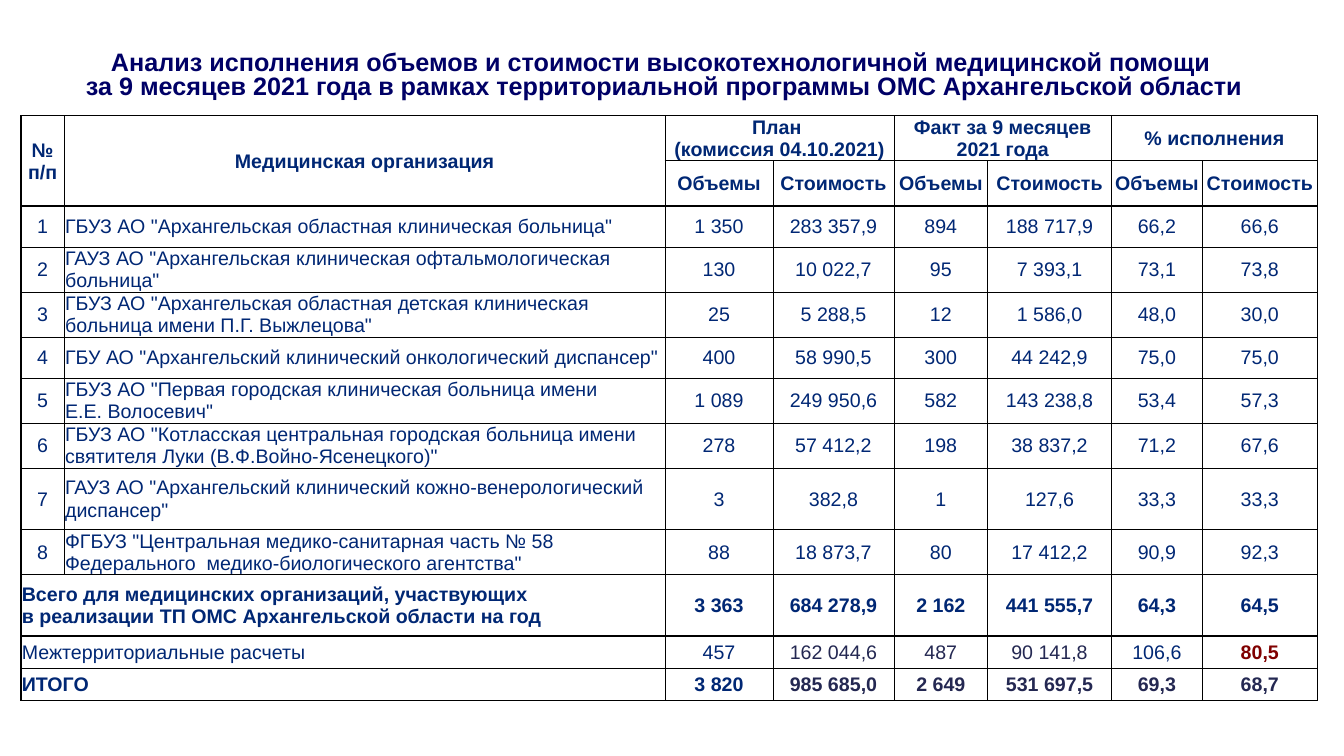
from lxml.etree import SubElement as Sub
from pptx import Presentation
from pptx.dml.color import RGBColor as Rgb
from pptx.enum.text import MSO_ANCHOR as Anchor, PP_ALIGN as Align
from pptx.oxml.ns import qn
from pptx.util import Cm, Pt

FONT = "Arial"
HUE = {"title": "000066", "text": "002774", "dark": "242852",
       "alert": "800000", "line": "000000"}

# Table grid, in centimetres
COLS = [1.09, 15.14, 2.72, 3.05, 2.36, 3.12, 2.29, 2.9]
ROWS = [1.12, 1.14, 1.04, 1.13, 1.13, 1.04, 1.13, 1.13, 1.55, 1.13,
        1.55, 0.83, 0.79]
HEAVY = {0, 2, 11, 12, 13}  # horizontal rules drawn at 1 pt
SUM, INTER, TOTAL = 10, 11, 12  # closing rows

TITLE = ("Анализ исполнения объемов и стоимости высокотехнологичной медицинской помощи \n"
         "за 9 месяцев 2021 года в рамках территориальной программы ОМС Архангельской области")
HEAD = ["№ п/п", "Медицинская организация", "План \n(комиссия 04.10.2021)", "",
        "Факт за 9 месяцев 2021 года", "", "% исполнения", ""]
SUBHEAD = ["", ""] + ["Объемы", "Стоимость"] * 3
UNITS = [
    ['ГБУЗ АО "Архангельская областная клиническая больница"',
     "1 350", "283 357,9", "894", "188 717,9", "66,2", "66,6"],
    ['ГАУЗ АО "Архангельская клиническая офтальмологическая больница"',
     "130", "10 022,7", "95", "7 393,1", "73,1", "73,8"],
    ['ГБУЗ АО "Архангельская областная детская клиническая больница имени П.Г. Выжлецова"',
     "25", "5 288,5", "12", "1 586,0", "48,0", "30,0"],
    ['ГБУ АО "Архангельский клинический онкологический диспансер"',
     "400", "58 990,5", "300", "44 242,9", "75,0", "75,0"],
    ['ГБУЗ АО "Первая городская клиническая больница имени \nЕ.Е. Волосевич"',
     "1 089", "249 950,6", "582", "143 238,8", "53,4", "57,3"],
    ['ГБУЗ АО "Котласская центральная городская больница имени '
     'святителя Луки (В.Ф.Войно-Ясенецкого)"',
     "278", "57 412,2", "198", "38 837,2", "71,2", "67,6"],
    ['ГАУЗ АО "Архангельский клинический кожно-венерологический диспансер"',
     "3", "382,8", "1", "127,6", "33,3", "33,3"],
    ['ФГБУЗ "Центральная медико-санитарная часть № 58 '
     'Федерального  медико-биологического агентства"',
     "88", "18 873,7", "80", "17 412,2", "90,9", "92,3"],
]
CLOSING = [
    ["Всего для медицинских организаций, участвующих \n"
     "в реализации ТП ОМС Архангельской области на год", "",
     "3 363", "684 278,9", "2 162", "441 555,7", "64,3", "64,5"],
    ["Межтерриториальные расчеты", "",
     "457", "162 044,6", "487", "90 141,8", "106,6", "80,5"],
    ["ИТОГО", "", "3 820", "985 685,0", "2 649", "531 697,5", "69,3", "68,7"],
]


def write(para, text, size, hue, bold):
    """Add one run per line, with line breaks between."""
    for i, part in enumerate(text.split("\n")):
        if i:
            para.add_line_break()
        run = para.add_run()
        run.text = part
        font = run.font
        font.name, font.size, font.bold = FONT, Pt(size), bold
        font.color.rgb = Rgb.from_string(HUE[hue])


def border(cell, row, col):
    """Draw the four sides: heavy at the frame and section rules."""
    sides = {"a:lnL": col == 0, "a:lnR": col == len(COLS) - 1,
             "a:lnT": row in HEAVY, "a:lnB": row + 1 in HEAVY}
    props = cell._tc.get_or_add_tcPr()
    for tag, heavy in sides.items():
        line = Sub(props, qn(tag), w=str(Pt(1 if heavy else 0.5)))
        fill = Sub(line, qn("a:solidFill"))
        Sub(fill, qn("a:srgbClr"), val=HUE["line"])


def style(row, col):
    """Return the colour and weight of a cell's text."""
    if (row, col) == (INTER, 7):
        return "alert", True
    dark = (row == INTER and col in (3, 4, 5)) or (row == TOTAL and col > 2)
    return "dark" if dark else "text", row < 2 or row in (SUM, TOTAL)


def fill_cell(cell, row, col, text):
    cell.margin_left = cell.margin_right = cell.margin_top = Cm(0.02)
    cell.margin_bottom = 0
    cell.vertical_anchor = Anchor.MIDDLE
    border(cell, row, col)
    cell.fill.background()
    if text:
        para = cell.text_frame.paragraphs[0]
        left = (col == 1 and row > 1) or (col == 0 and row >= SUM)
        para.alignment = Align.LEFT if left else Align.CENTER
        write(para, text, 14, *style(row, col))


def add_title(slide):
    title = slide.shapes.title
    title.left, title.top = Cm(0.74), Cm(1.14)
    title.width, title.height = Cm(32), Cm(1.57)
    frame = title.text_frame
    frame.word_wrap = True
    frame.vertical_anchor = Anchor.MIDDLE
    para = frame.paragraphs[0]
    para.alignment, para.line_spacing = Align.CENTER, 0.8
    write(para, TITLE, 18, "title", True)


def add_grid(slide):
    units = [[str(n)] + unit for n, unit in enumerate(UNITS, 1)]
    data = [HEAD, SUBHEAD] + units + CLOSING
    table = slide.shapes.add_table(len(ROWS), len(COLS), Cm(0.53), Cm(2.92),
                                   Cm(sum(COLS)), Cm(sum(ROWS))).table
    table.first_row = table.horz_banding = False
    for col, width in zip(table.columns, COLS):
        col.width = Cm(width)
    for row, height in zip(table.rows, ROWS):
        row.height = Cm(height)
    for r, line in enumerate(data):
        for c, text in enumerate(line):
            fill_cell(table.cell(r, c), r, c, text)
    # Merged headings and closing labels
    for c in (0, 1):
        table.cell(0, c).merge(table.cell(1, c))
    for c in (2, 4, 6):
        table.cell(0, c).merge(table.cell(0, c + 1))
    for r in (SUM, INTER, TOTAL):
        table.cell(r, 0).merge(table.cell(r, 1))


def main():
    deck = Presentation()
    deck.slide_width, deck.slide_height = Cm(33.87), Cm(19.05)
    slide = deck.slides.add_slide(deck.slide_layouts[5])
    add_grid(slide)
    add_title(slide)
    deck.save("out.pptx")


if __name__ == "__main__":
    main()
